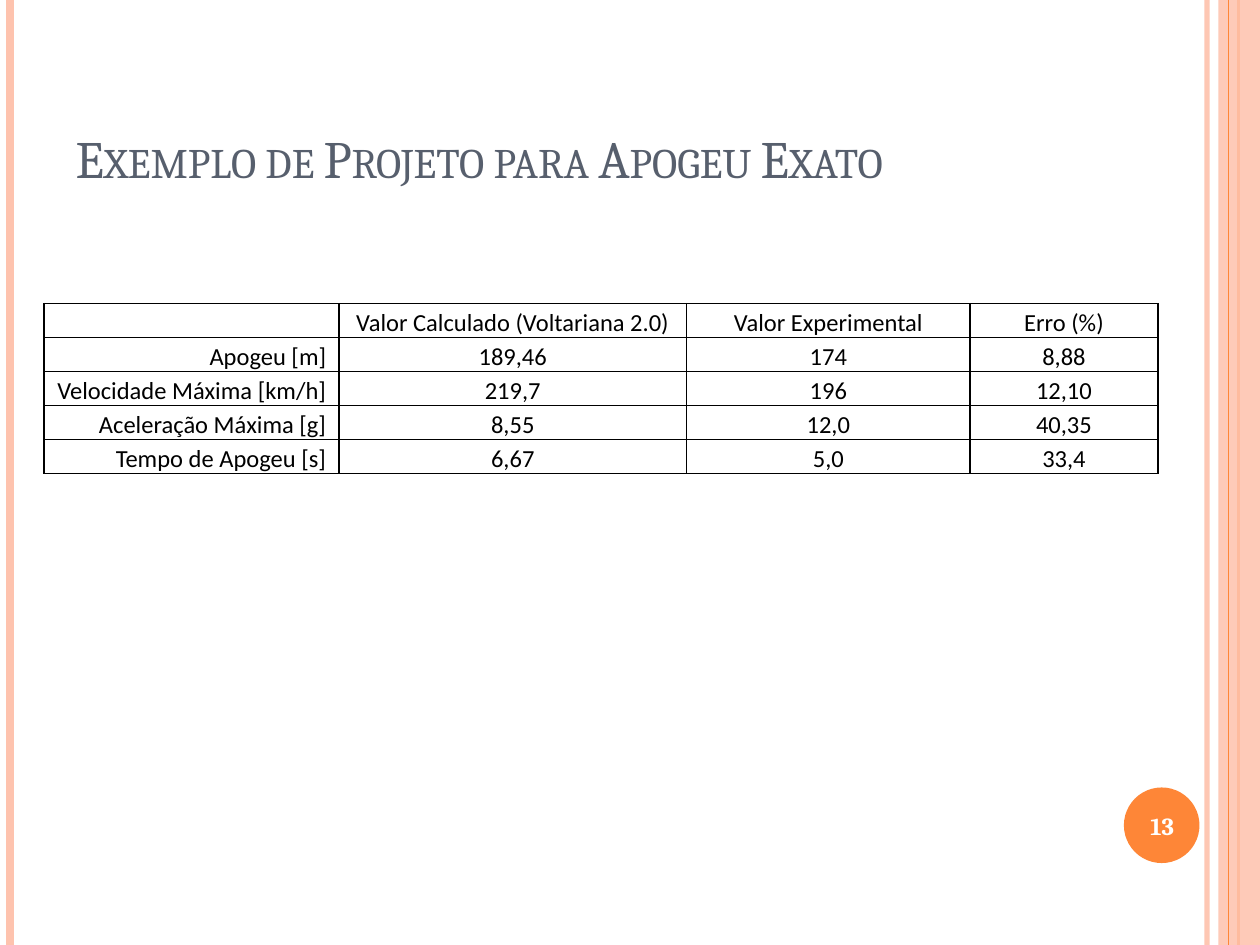
from lxml.etree import SubElement
from pptx import Presentation
from pptx.dml.color import RGBColor
from pptx.enum.shapes import MSO_CONNECTOR as Connector, MSO_SHAPE as Shape
from pptx.enum.text import MSO_ANCHOR as Anchor, MSO_AUTO_SIZE as AutoSize, PP_ALIGN as Align
from pptx.oxml.ns import qn
from pptx.util import Inches, Pt

COLORS = {"peach": "FEC3AE", "orange": "FE8637", "slate": "575F6D",
          "white": "FFFFFF", "black": "000000"}
WIDTH, HEIGHT = 10, 7.5
COLUMN_WIDTHS = [2.34, 2.76, 2.25, 1.49]
ROW_HEIGHT = 0.27
ROWS = [
    ["", "Valor Calculado (Voltariana 2.0)", "Valor Experimental", "Erro (%)"],
    ["Apogeu [m]", "189,46", "174", "8,88"],
    ["Velocidade Máxima [km/h]", "219,7", "196", "12,10"],
    ["Aceleração Máxima [g]", "8,55", "12,0", "40,35"],
    ["Tempo de Apogeu [s]", "6,67", "5,0", "33,4"],
]


def color(name):
    return RGBColor.from_string(COLORS[name])


def inches(box):
    return [Inches(length) for length in box]


def set_alpha(element, percent):
    for color_element in element.iter(qn("a:srgbClr")):
        SubElement(color_element, qn("a:alpha"), val=str(percent * 1000))


def write(frame, text, font="Cambria", size=14, fill="black", bold=False,
          align=Align.LEFT, anchor=Anchor.MIDDLE, spacing=None, small_caps=False):
    frame.word_wrap = True
    frame.vertical_anchor = anchor
    paragraph = frame.paragraphs[0]
    paragraph.alignment = align
    if spacing:
        paragraph.line_spacing = spacing
    if not text:
        SubElement(paragraph._p, qn("a:endParaRPr"), sz=str(size * 100))
        return
    run = paragraph.add_run()
    run.text = text
    run.font.name, run.font.size, run.font.bold = font, Pt(size), bold
    run.font.color.rgb = color(fill)
    if small_caps:
        run._r.get_or_add_rPr().set("cap", "small")


def add_stripe(slide, x, name, weight, alpha=100):
    stripe = slide.shapes.add_connector(Connector.STRAIGHT, *inches((x, 0, x, HEIGHT)))
    stripe.line.color.rgb = color(name)
    stripe.line.width = Pt(weight)
    properties = stripe._element.spPr
    if alpha < 100:
        set_alpha(properties, alpha)
    SubElement(properties, qn("a:effectLst"))


def add_filled_shape(slide, kind, box, name, alpha=100):
    shape = slide.shapes.add_shape(kind, *inches(box))
    shape.shadow.inherit = False
    shape.fill.solid()
    shape.fill.fore_color.rgb = color(name)
    shape.line.fill.background()
    if alpha < 100:
        set_alpha(shape._element.spPr, alpha)


def add_side_bands(slide, band_left):
    add_stripe(slide, band_left - 0.09, "peach", 3, alpha=93)
    add_stripe(slide, 0.08, "peach", 4.5)
    add_stripe(slide, band_left + 0.16, "orange", 1.5)
    add_filled_shape(slide, Shape.RECTANGLE, (band_left, 0, WIDTH - band_left, HEIGHT),
                     "peach", alpha=87)
    add_stripe(slide, band_left + 0.08, "orange", 0.75)


def add_title(slide, box):
    title = slide.shapes.title
    title.left, title.top, title.width, title.height = inches(box)
    title.text_frame.auto_size = AutoSize.NONE
    write(title.text_frame, "Exemplo de Projeto para Apogeu Exato", size=30,
          fill="slate", anchor=Anchor.BOTTOM, small_caps=True)


def add_page_badge(slide, box):
    left, top, width, height = box
    add_filled_shape(slide, Shape.OVAL, box, "orange")
    number = slide.shapes.add_textbox(
        *inches((left - 0.03, top + 0.02, width + 0.07, height - 0.03)))
    write(number.text_frame, "13", fill="white", bold=True, align=Align.CENTER)


def add_cell_borders(cell):
    properties = cell._tc.get_or_add_tcPr()
    for position, side in enumerate(("lnL", "lnR", "lnT", "lnB")):
        border = properties.makeelement(qn("a:" + side), {"w": str(Pt(1))})
        fill = SubElement(border, qn("a:solidFill"))
        SubElement(fill, qn("a:srgbClr"), val=COLORS["black"])
        properties.insert(position, border)


def add_results_table(slide, left, top):
    size = (sum(COLUMN_WIDTHS), ROW_HEIGHT * len(ROWS))
    frame = slide.shapes.add_table(len(ROWS), len(COLUMN_WIDTHS), *inches((left, top, *size)))
    table = frame.table
    table.first_row = table.horz_banding = False
    for column, width in zip(table.columns, COLUMN_WIDTHS):
        column.width = Inches(width)
    for row_index, values in enumerate(ROWS):
        table.rows[row_index].height = Inches(ROW_HEIGHT)
        for column_index, value in enumerate(values):
            cell = table.cell(row_index, column_index)
            cell.margin_left = cell.margin_right = Inches(0.1)
            cell.margin_top = cell.margin_bottom = 0
            cell.fill.background()
            add_cell_borders(cell)
            write(cell.text_frame, value, font="Calibri", spacing=1.15, anchor=Anchor.TOP,
                  align=Align.CENTER if column_index else Align.RIGHT)


def main():
    presentation = Presentation()
    presentation.slide_width, presentation.slide_height = inches((WIDTH, HEIGHT))
    slide = presentation.slides.add_slide(presentation.slide_layouts[5])
    add_side_bands(slide, 9.67)
    add_title(slide, (0.5, 0.3, 8.17, 1.25))
    add_page_badge(slide, (8.92, 6.25, 0.6, 0.6))
    add_results_table(slide, 0.35, 2.41)
    presentation.save("out.pptx")


if __name__ == "__main__":
    main()
